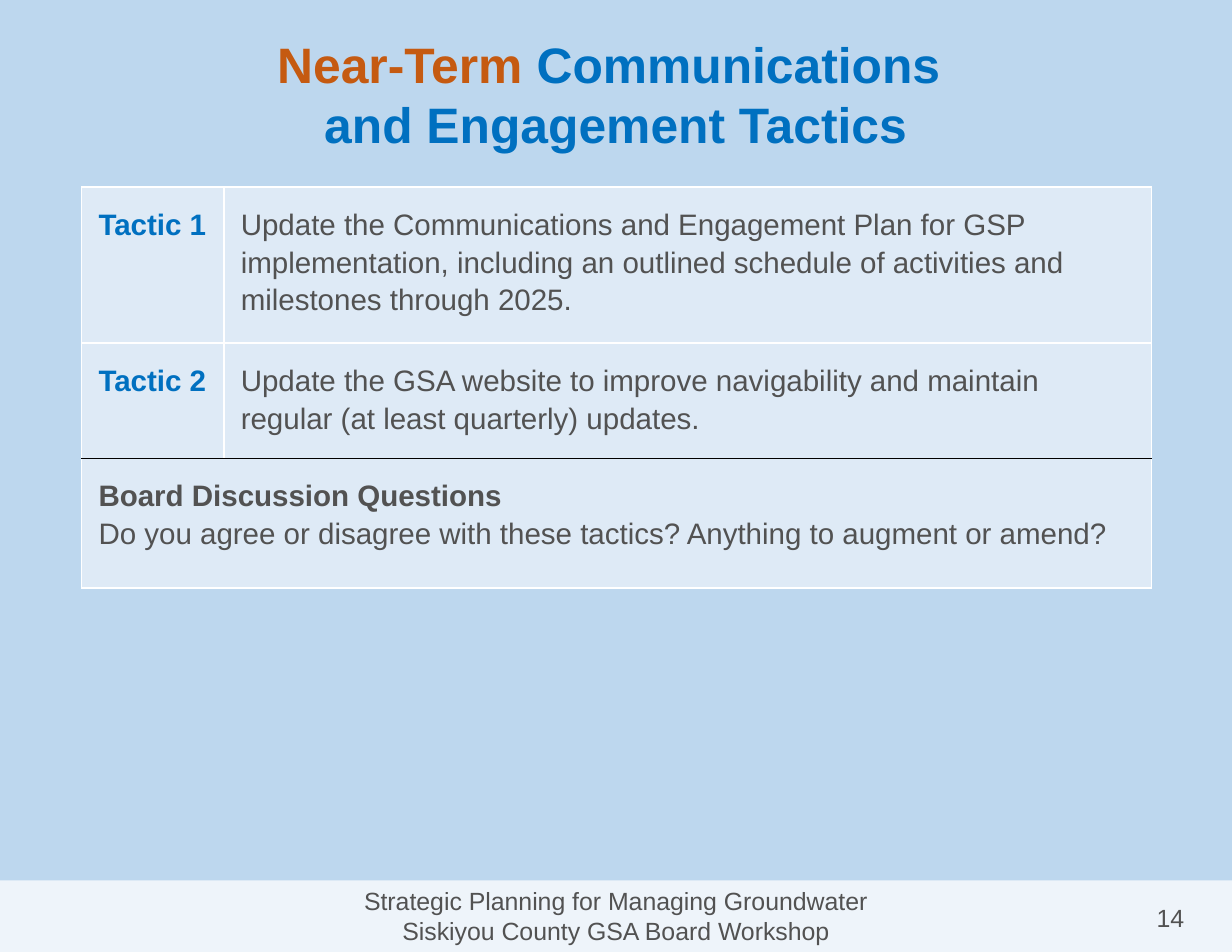
from lxml import etree
from pptx import Presentation
from pptx.dml.color import RGBColor
from pptx.enum.shapes import MSO_SHAPE
from pptx.enum.text import MSO_ANCHOR, PP_ALIGN
from pptx.oxml.ns import qn
from pptx.util import Inches, Pt

RECT = MSO_SHAPE.RECTANGLE
MID, TOP = MSO_ANCHOR.MIDDLE, MSO_ANCHOR.TOP
LEFT, CENTER = PP_ALIGN.LEFT, PP_ALIGN.CENTER
WIDE, HIGH = 11, 8.5
BLUE, RUST, GRAY, PALE = "0070C0", "C55A11", "525252", "DEEAF6"

TACTICS = [
    ("Tactic 1", "Update the Communications and Engagement Plan for GSP "
     "implementation, including an outlined schedule of activities and "
     "milestones through 2025."),
    ("Tactic 2", "Update the GSA website to improve navigability and maintain "
     "regular (at least quarterly) updates."),
]
BOARD = ["Board Discussion Questions",
         "Do you agree or disagree with these tactics? Anything to augment or amend?"]
FOOTER = ["Strategic Planning for Managing Groundwater",
          "Siskiyou County GSA Board Workshop"]


def paint(fill, color):
    fill.solid()
    fill.fore_color.rgb = RGBColor.from_string(color)


def style(item, **values):
    for name, value in values.items():
        setattr(item, name, value)


def write(frame, paras, size, align=LEFT, space=1.0):
    """Fill a text frame; each paragraph is a list of (text, color, bold)."""
    for i, runs in enumerate(paras):
        para = frame.paragraphs[0] if i == 0 else frame.add_paragraph()
        style(para, alignment=align, line_spacing=space)
        for text, color, bold in runs:
            for j, line in enumerate(text.split("\n")):
                if j:
                    para.add_line_break()
                run = para.add_run()
                run.text = line
                style(run.font, name="Arial", size=Pt(size), bold=bold)
                run.font.color.rgb = RGBColor.from_string(color)


def label(slide, box, paras, size, anchor=TOP, space=1.0):
    frame = slide.shapes.add_textbox(*map(Inches, box)).text_frame
    style(frame, word_wrap=True, vertical_anchor=anchor)
    write(frame, paras, size, CENTER, space)


def rule(cell, side):
    """Draw a thin black border on one side of a cell."""
    props = cell._tc.get_or_add_tcPr()
    line = etree.Element(qn(f"a:{side}"), w=str(Pt(1)))
    fill = etree.SubElement(line, qn("a:solidFill"))
    etree.SubElement(fill, qn("a:srgbClr"), val="000000")
    props.insert(0, line)


def panel(slide, box):
    left, top, wide, high = box
    shape = slide.shapes.add_table(3, 2, *map(Inches, box))
    table = shape.table
    style(table, first_row=False, horz_banding=False)
    for col, share in zip(table.columns, (0.133, 0.867)):
        col.width = Inches(wide * share)
    for row, share in zip(table.rows, (0.387, 0.289, 0.324)):
        row.height = Inches(high * share)
    inset = Inches(0.15)
    for cell in table.iter_cells():
        paint(cell.fill, PALE)
        style(cell, margin_left=inset, margin_right=inset,
              margin_top=inset, margin_bottom=inset)
    for i, (name, text) in enumerate(TACTICS):
        for j, run in enumerate([(name, BLUE, True), (text, GRAY, False)]):
            write(table.cell(i, j).text_frame, [[run]], 19, space=1.15)
    board = table.cell(2, 0)
    board.merge(table.cell(2, 1))
    head, ask = BOARD
    write(board.text_frame, [[(head, GRAY, True)], [(ask, GRAY, False)]],
          19, space=1.15)
    for j in range(2):
        rule(table.cell(1, j), "lnB")
        rule(table.cell(2, j), "lnT")


def footer(slide, box):
    left, top, wide, high = box
    band = slide.shapes.add_shape(RECT, *map(Inches, box))
    band.shadow.inherit = False
    band.line.fill.background()
    paint(band.fill, "FFFFFF")
    color = band._element.spPr.find(".//" + qn("a:srgbClr"))
    etree.SubElement(color, qn("a:alpha"), val="75000")
    style(band.text_frame, word_wrap=True, vertical_anchor=TOP)
    write(band.text_frame, [[(line, GRAY, False)] for line in FOOTER], 16, CENTER)
    label(slide, (left + wide - 0.9, top + 0.15, 0.7, 0.37),
          [[("14", GRAY, False)]], 16)


def main():
    deck = Presentation()
    style(deck, slide_width=Inches(WIDE), slide_height=Inches(HIGH))
    slide = deck.slides.add_slide(deck.slide_layouts[6])
    paint(slide.background.fill, "BDD7EE")
    label(slide, (WIDE * 0.05, HIGH * 0.04, WIDE * 0.9, 0.99),
          [[("Near-Term", RUST, True),
            (" Communications \nand Engagement Tactics", BLUE, True)]], 32, MID)
    footer(slide, (0, 7.86, WIDE, 0.64))
    panel(slide, (0.73, 1.67, 9.55, 3.57))
    deck.save("out.pptx")


if __name__ == "__main__":
    main()
